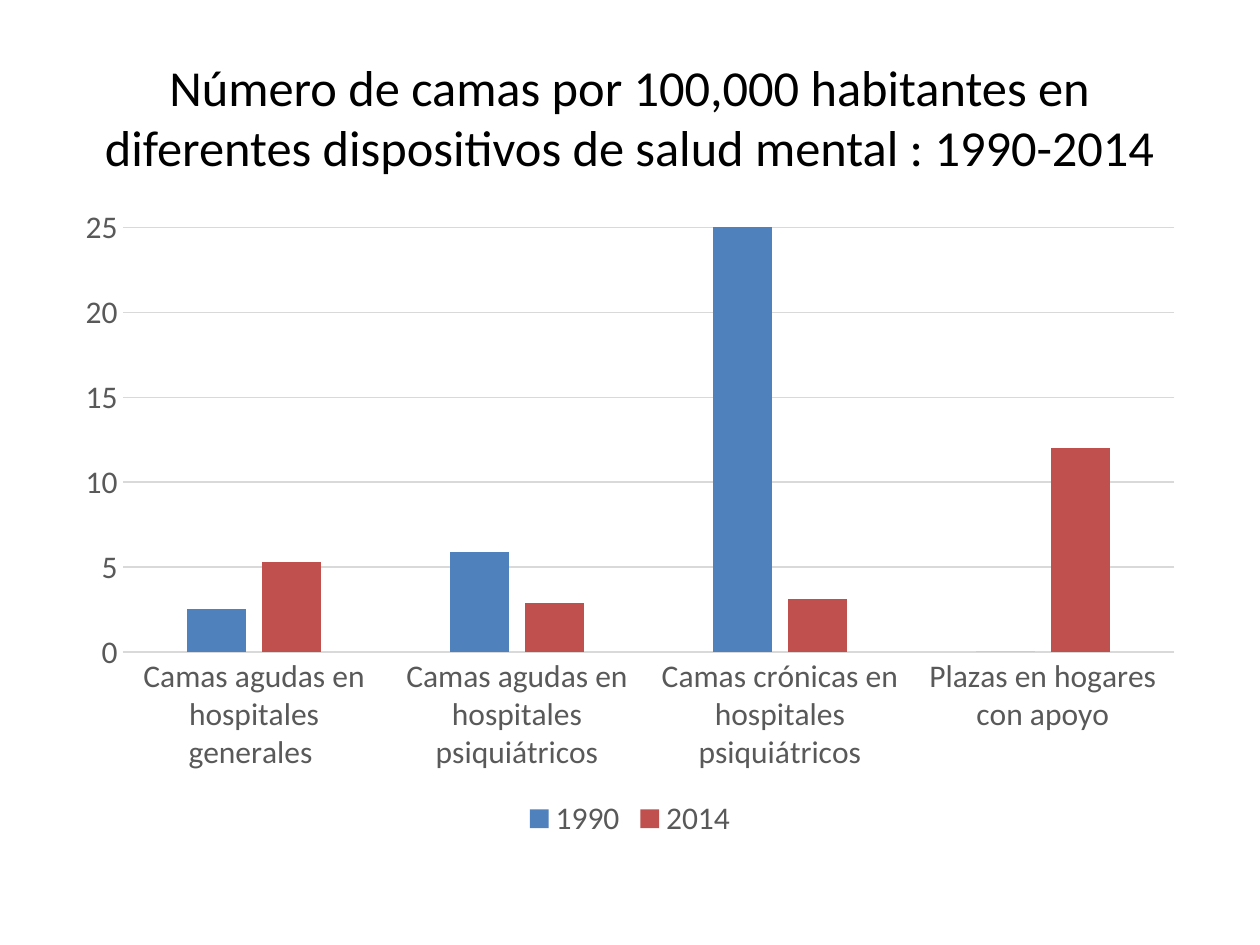
"""Build a slide comparing mental health beds per 100,000 inhabitants in 1990 and 2014."""
from dataclasses import dataclass
from typing import Any

from pptx import Presentation
from pptx.chart.data import CategoryChartData
from pptx.dml.color import RGBColor
from pptx.enum.chart import XL_CHART_TYPE, XL_LEGEND_POSITION, XL_TICK_MARK
from pptx.enum.text import MSO_ANCHOR, PP_ALIGN
from pptx.util import Pt

COLOURS = {
    "title": "000000",
    "label": "595959",
    "grid": "D9D9D9",
    "1990": "4F81BD",
    "2014": "C0504D",
}
FONT = "Calibri"
TITLE = (
    "Número de camas por 100,000 habitantes en "
    "diferentes dispositivos de salud mental : 1990-2014"
)
CATEGORIES = (
    "Camas agudas en hospitales generales ",
    "Camas agudas en hospitales psiquiátricos",
    "Camas crónicas en hospitales psiquiátricos",
    "Plazas en hogares con apoyo",
)


@dataclass(frozen=True)
class BedSeries:
    """Beds per 100,000 inhabitants in one year."""

    year: str
    values: tuple[float, ...]


@dataclass(frozen=True)
class Box:
    """Position and size in points."""

    left: float
    top: float
    width: float
    height: float

    def lengths(self) -> tuple[Pt, ...]:
        """Return the four lengths for a new shape."""
        return tuple(map(Pt, (self.left, self.top, self.width, self.height)))


SERIES = (
    BedSeries("1990", (2.5, 5.9, 25.9, 0)),
    BedSeries("2014", (5.3, 2.9, 3.1, 12)),
)
TITLE_BOX = Box(36, 21.6, 648, 90)
CHART_BOX = Box(36, 111.6, 648, 370.8)


def apply_format(target: Any, values: dict[str, Any]) -> None:
    """Set every named attribute on the target."""
    for name, value in values.items():
        setattr(target, name, value)


def colour(name: str) -> RGBColor:
    """Look up a named colour."""
    return RGBColor.from_string(COLOURS[name])


def style_font(font: Any, size: float, colour_name: str) -> None:
    """Give a font its typeface, size and colour."""
    apply_format(font, {"name": FONT, "size": Pt(size), "bold": False})
    font.color.rgb = colour(colour_name)


def style_line(line: Any) -> None:
    """Give an axis or grid line its thin grey stroke."""
    line.color.rgb = colour("grid")
    line.width = Pt(0.75)


def add_title(slide: Any) -> None:
    """Add the centred slide title."""
    shape = slide.shapes.add_textbox(*TITLE_BOX.lengths())
    frame = shape.text_frame
    apply_format(frame, {"word_wrap": True, "vertical_anchor": MSO_ANCHOR.MIDDLE})
    paragraph = frame.paragraphs[0]
    paragraph.alignment = PP_ALIGN.CENTER
    run = paragraph.add_run()
    run.text = TITLE
    style_font(run.font, 28.8, "title")


def add_bed_chart(slide: Any) -> None:
    """Add the clustered column chart of beds."""
    data = CategoryChartData()
    data.categories = CATEGORIES
    for bed_series in SERIES:
        data.add_series(bed_series.year, bed_series.values)
    chart = slide.shapes.add_chart(
        XL_CHART_TYPE.COLUMN_CLUSTERED, *CHART_BOX.lengths(), data
    ).chart
    apply_format(chart, {"has_title": False, "has_legend": True})
    style_font(chart.font, 10, "title")
    apply_format(
        chart.legend,
        {"position": XL_LEGEND_POSITION.BOTTOM, "include_in_layout": False},
    )
    style_font(chart.legend.font, 18, "label")

    plot = chart.plots[0]
    apply_format(plot, {"gap_width": 219, "overlap": -27, "vary_by_categories": False})
    for series in plot.series:
        series.format.fill.solid()
        series.format.fill.fore_color.rgb = colour(series.name)
        series.invert_if_negative = False

    ticks = {
        "major_tick_mark": XL_TICK_MARK.NONE,
        "minor_tick_mark": XL_TICK_MARK.NONE,
    }
    for axis in (chart.category_axis, chart.value_axis):
        apply_format(axis, ticks)
        style_font(axis.tick_labels.font, 18, "label")
    style_line(chart.category_axis.format.line)
    apply_format(
        chart.value_axis,
        {
            "minimum_scale": 0,
            "maximum_scale": 25,
            "major_unit": 5,
            "has_major_gridlines": True,
        },
    )
    chart.value_axis.format.line.fill.background()
    style_line(chart.value_axis.major_gridlines.format.line)


def main() -> None:
    """Build and save the presentation."""
    presentation = Presentation()
    apply_format(presentation, {"slide_width": Pt(720), "slide_height": Pt(540)})
    slide = presentation.slides.add_slide(presentation.slide_layouts[6])
    add_title(slide)
    add_bed_chart(slide)
    presentation.save("out.pptx")


if __name__ == "__main__":
    main()
